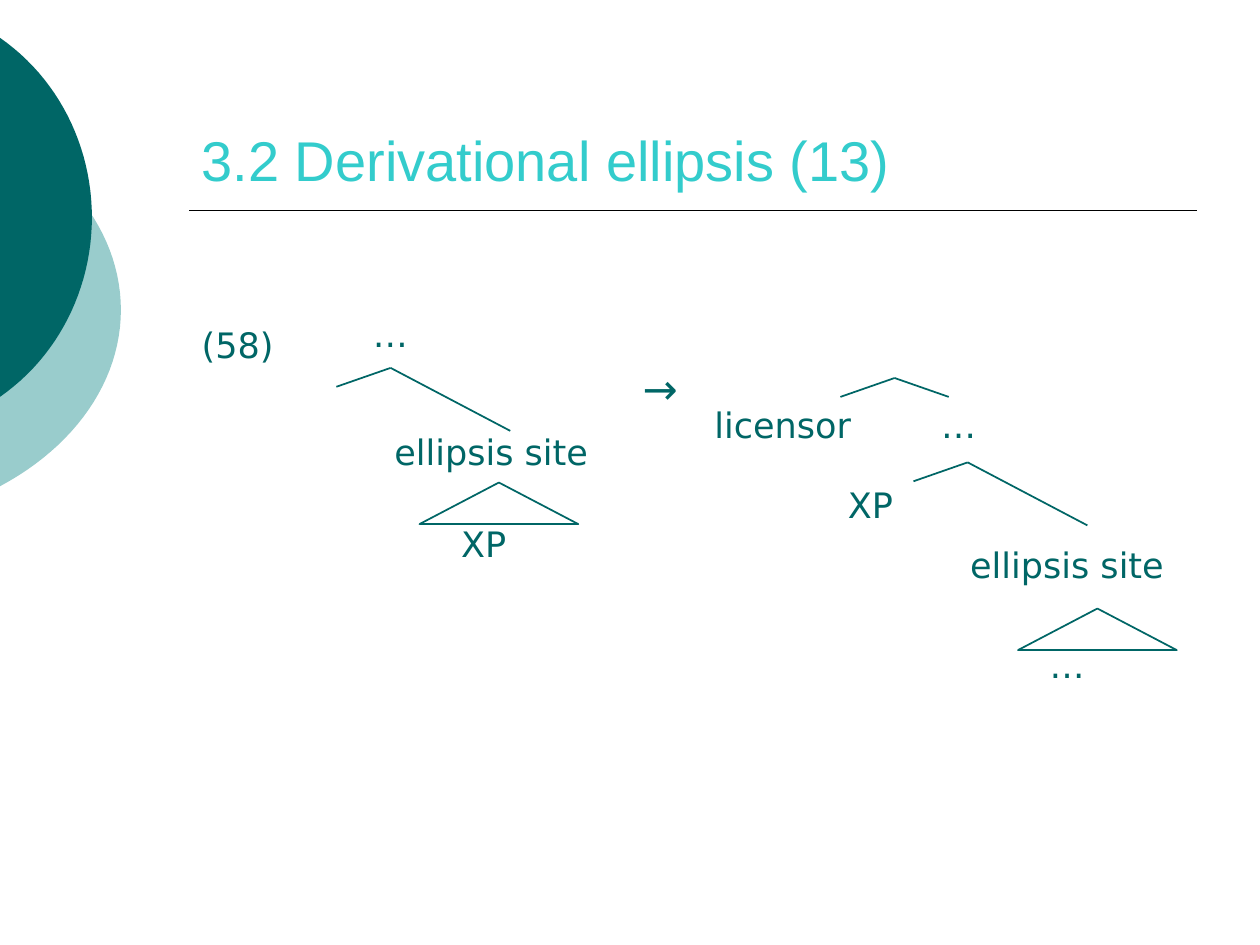
import pptx
import pptx.util
import pptx.dml.color
import pptx.enum.shapes
import pptx.enum.text
import pptx.oxml

Inches = pptx.util.Inches
Pt = pptx.util.Pt
RGBColor = pptx.dml.color.RGBColor

TEAL = RGBColor(0x00, 0x66, 0x66)
PALE_TEAL = RGBColor(0x99, 0xCC, 0xCC)
TURQUOISE = RGBColor(0x33, 0xCC, 0xCC)
BLACK = RGBColor(0x00, 0x00, 0x00)

CURVE_STEPS = 24
SHORT_LEFT = (-0.43, 0.15)
SHORT_RIGHT = (0.43, 0.15)
LONG_RIGHT = (0.95, 0.5)

# Text, left, top
LABELS = [
    ("(58)", 1.6, 2.57),
    # Tree before the derivation
    ("…", 2.96, 2.48),
    ("ellipsis site", 3.13, 3.42),
    ("XP", 3.66, 4.15),
    # Tree after the derivation
    ("licensor", 5.67, 3.2),
    ("…", 7.47, 3.2),
    ("XP", 6.73, 3.84),
    ("ellipsis site", 7.7, 4.31),
    ("…", 8.33, 5.11),
]

# Apex and the offsets of its two arms
BRANCHES = [
    ((3.1, 2.92), SHORT_LEFT, LONG_RIGHT),
    ((7.1, 3), SHORT_LEFT, SHORT_RIGHT),
    ((7.68, 3.67), SHORT_LEFT, LONG_RIGHT),
]

TRIANGLES = [(3.33, 3.83), (8.08, 4.83)]


def format_text(frame, font_name, size, color):
    for para in frame.paragraphs:
        para.alignment = pptx.enum.text.PP_ALIGN.LEFT
        for span in para.runs:
            span.font.name = font_name
            span.font.size = Pt(size)
            span.font.color.rgb = color


def curve_points(start, control_1, control_2, end):
    """Return points along a cubic curve, without its start."""
    points = []
    for step in range(1, CURVE_STEPS + 1):
        t = step / CURVE_STEPS
        weights = ((1 - t) ** 3, 3 * t * (1 - t) ** 2, 3 * t * t * (1 - t), t ** 3)
        corners = (start, control_1, control_2, end)
        points.append(tuple(sum(w * corner[axis] for w, corner in zip(weights, corners))
                            for axis in (0, 1)))
    return points


def add_disc(page, top, bottom, reach, shoulder, bulge, color):
    """Draw a disc cut off by the left edge of the page."""
    middle = (top + bottom) / 2
    upper = curve_points((0, top), (shoulder, top + 0.32),
                         (reach, middle - bulge), (reach, middle))
    lower = curve_points((reach, middle), (reach, middle + bulge),
                         (shoulder, bottom - 0.32), (0, bottom))
    builder = page.shapes.build_freeform(0, Inches(top), scale=1.0)
    builder.add_line_segments([(Inches(x), Inches(y)) for x, y in upper + lower])
    disc = builder.convert_to_shape()
    disc.shadow.inherit = False
    disc.fill.solid()
    disc.fill.fore_color.rgb = color
    disc.line.fill.background()


def add_line(page, start, end, color):
    line = page.shapes.add_connector(
        pptx.enum.shapes.MSO_CONNECTOR.STRAIGHT,
        Inches(start[0]), Inches(start[1]), Inches(end[0]), Inches(end[1]))
    line.line.color.rgb = color
    line.line.width = Pt(1)
    properties = line.element.spPr
    properties.append(pptx.oxml.parse_xml(
        '<a:effectLst xmlns:a="http://schemas.openxmlformats.org/drawingml/2006/main"/>'))


def add_branch(page, apex, *arms):
    for across, down in arms:
        add_line(page, apex, (apex[0] + across, apex[1] + down), TEAL)


def add_triangle(page, left, top):
    triangle = page.shapes.add_shape(
        pptx.enum.shapes.MSO_SHAPE.ISOSCELES_TRIANGLE,
        Inches(left), Inches(top), Inches(1.26), Inches(0.33))
    triangle.shadow.inherit = False
    triangle.fill.background()
    triangle.line.color.rgb = TEAL
    triangle.line.width = Pt(1)


def add_label(page, text, left, top, size=20):
    width = 0.2 + 0.13 * len(text)
    box = page.shapes.add_textbox(Inches(left), Inches(top), Inches(width), Inches(0.33))
    frame = box.text_frame
    frame.margin_left = frame.margin_right = frame.margin_top = frame.margin_bottom = 0
    frame.word_wrap = False
    frame.text = text
    format_text(frame, "DejaVu Sans", size, TEAL)


def set_title(page, text):
    title = page.shapes.title
    title.left, title.top = Inches(1.5), Inches(0.33)
    title.width, title.height = Inches(8), Inches(1.25)
    title.text_frame.text = text
    title.text_frame.vertical_anchor = pptx.enum.text.MSO_ANCHOR.BOTTOM
    format_text(title.text_frame, "Arial", 32, TURQUOISE)


def main():
    deck = pptx.Presentation()
    deck.slide_width, deck.slide_height = Inches(10), Inches(7.5)
    page = deck.slides.add_slide(deck.slide_layouts[5])

    # Decoration and heading
    add_disc(page, 1.06, 3.86, 0.96, 0.6, 0.56, PALE_TEAL)
    add_disc(page, 0.3, 3.15, 0.73, 0.46, 0.57, TEAL)
    add_line(page, (1.5, 1.67), (9.5, 1.67), BLACK)
    set_title(page, "3.2 Derivational ellipsis (13)")

    # Syntax trees
    for text, left, top in LABELS:
        add_label(page, text, left, top)
    for branch in BRANCHES:
        add_branch(page, *branch)
    for left, top in TRIANGLES:
        add_triangle(page, left, top)

    # Derivation arrow
    add_label(page, "→", 5.1, 2.88, size=24)

    deck.save("out.pptx")


if __name__ == "__main__":
    main()
